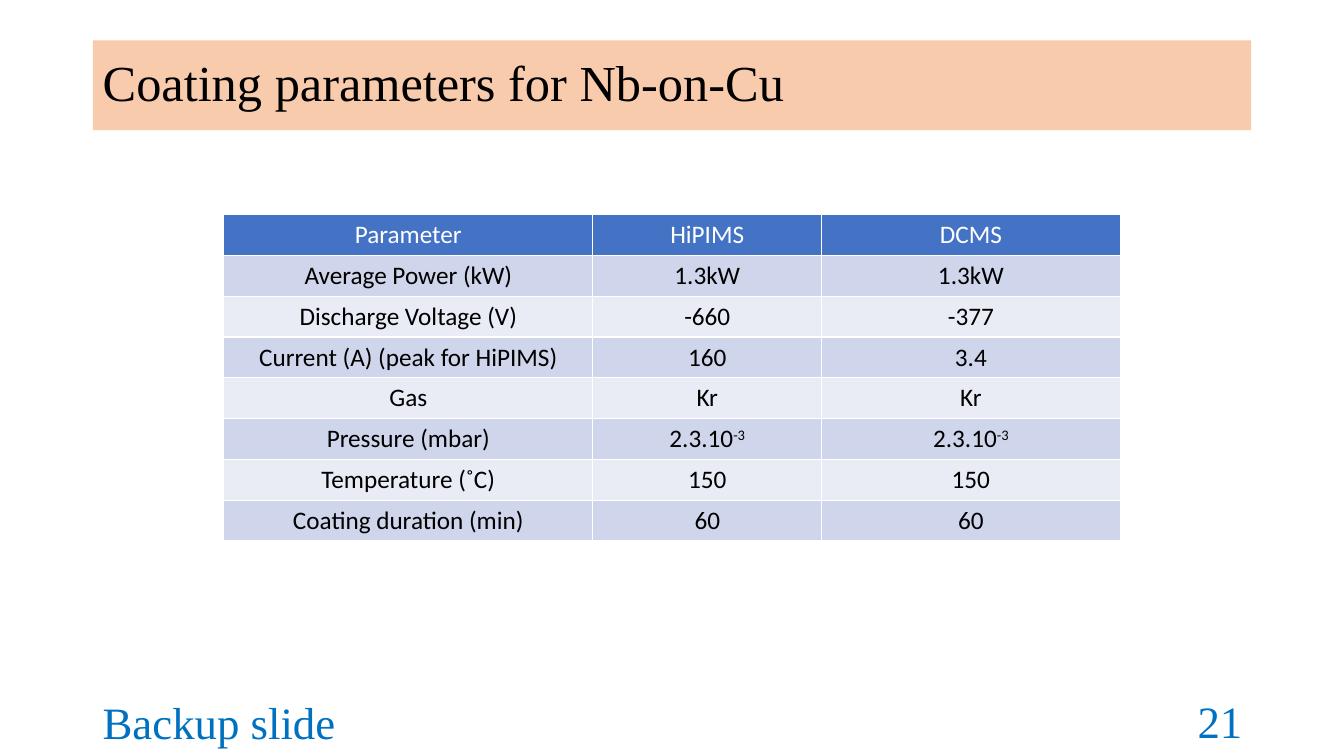
from pptx import Presentation
from pptx.dml.color import RGBColor
from pptx.enum.shapes import MSO_SHAPE
from pptx.enum.text import MSO_ANCHOR, PP_ALIGN
from pptx.util import Inches, Pt

SERIF = "Times New Roman"
BLUE = "0070C0"
W, H = 13.33, 7.5
MARGIN = 0.92
ROW_H = 0.405
COLS = [3.66, 2.27, 2.96]
TABLE_W = sum(COLS)


def rgb(value):
    return RGBColor.from_string(value)


def write(tf, text, font=SERIF, size=32, color=BLUE, align=PP_ALIGN.LEFT, spacing=1.0):
    tf.word_wrap = True
    p = tf.paragraphs[0]
    p.alignment = align
    p.line_spacing = spacing
    for i, part in enumerate(text.split("^")):
        r = p.add_run()
        r.text = part
        r.font.name = font
        r.font.size = Pt(size)
        r.font.bold = False
        r.font.color.rgb = rgb(color)
        if i:
            r.font._element.set("baseline", "30000")


prs = Presentation()
prs.slide_width, prs.slide_height = Inches(W), Inches(H)
s = prs.slides.add_slide(prs.slide_layouts[6])

sp = s.shapes.add_shape(MSO_SHAPE.RECTANGLE, Inches(MARGIN), Inches(0.4),
                        Inches(W - 2 * MARGIN), Inches(0.89))
sp.shadow.inherit = False
sp.fill.solid()
sp.fill.fore_color.rgb = rgb("F8CBAD")
sp.line.fill.background()
sp.text_frame.vertical_anchor = MSO_ANCHOR.MIDDLE
write(sp.text_frame, "Coating parameters for Nb-on-Cu", size=36, color="000000", spacing=0.9)

footers = [
    ("Backup slide", MARGIN, 6.96, 9.73, PP_ALIGN.LEFT),
    ("21", 10.9, 6.95, 1.52, PP_ALIGN.RIGHT),
]
for text, left, top, width, align in footers:
    sp = s.shapes.add_textbox(Inches(left), Inches(top), Inches(width), Inches(0.4))
    sp.text_frame.vertical_anchor = MSO_ANCHOR.MIDDLE
    write(sp.text_frame, text, align=align)

rows = [
    ("Parameter", "HiPIMS", "DCMS"),
    ("Average Power (kW)", "1.3kW", "1.3kW"),
    ("Discharge Voltage (V)", "-660", "-377"),
    ("Current (A) (peak for HiPIMS)", "160", "3.4"),
    ("Gas", "Kr", "Kr"),
    ("Pressure (mbar)", "2.3.10^-3", "2.3.10^-3"),
    ("Temperature (˚C)", "150", "150"),
    ("Coating duration (min)", "60", "60"),
]
table = s.shapes.add_table(len(rows), len(COLS), Inches((W - TABLE_W) / 2), Inches(2.13),
                           Inches(TABLE_W), Inches(ROW_H * len(rows))).table
for col, width in zip(table.columns, COLS):
    col.width = Inches(width)
for i, row in enumerate(rows):
    table.rows[i].height = Inches(ROW_H)
    fill = "4472C4" if i == 0 else ("E9EBF5", "CFD5EA")[i % 2]
    for j, text in enumerate(row):
        cell = table.cell(i, j)
        cell.fill.solid()
        cell.fill.fore_color.rgb = rgb(fill)
        write(cell.text_frame, text, font="Calibri", size=18, align=PP_ALIGN.CENTER,
              color="000000" if i else "FFFFFF")

prs.save("out.pptx")
